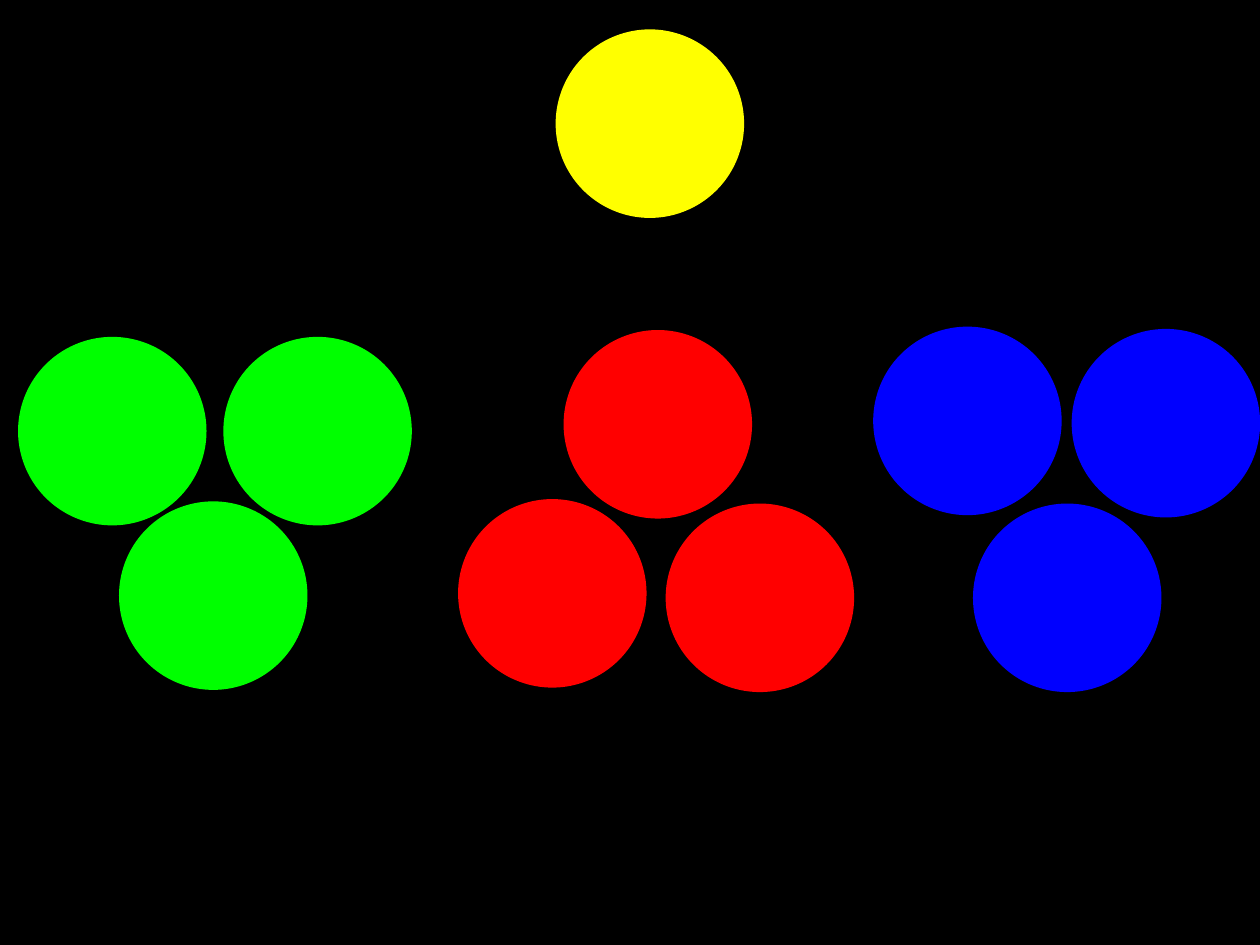
"""Draw coloured discs in three clusters with a yellow disc above, on black."""
from pptx import Presentation, util as u
from pptx.dml import color
from pptx.enum import shapes

hues = {"black": "000000", "green": "00FF00", "red": "FF0000",
        "blue": "0000FF", "yellow": "FFFF00"}
discs = [
    ("green", [(0.18, 2.99), (1.99, 2.99), (1.07, 4.44)]),
    ("red", [(4.99, 2.93), (5.89, 4.46)]),
    ("blue", [(8.6, 4.46), (9.47, 2.92), (7.72, 2.9)]),
    ("red", [(4.06, 4.42)]),
    ("yellow", [(4.92, 0.28)]),
]
size = u.Inches(1.62)

deck = Presentation()
deck.slide_width = u.Inches(11.11)
deck.slide_height = u.Inches(8.33)
slide = deck.slides.add_slide(deck.slide_layouts[6])
back = slide.background.fill
back.solid()
back.fore_color.rgb = color.RGBColor.from_string(hues["black"])

for hue, spots in discs:
    tint = color.RGBColor.from_string(hues[hue])
    for left, top in spots:
        disc = slide.shapes.add_shape(
            shapes.MSO_SHAPE.OVAL, u.Inches(left), u.Inches(top), size, size)
        disc.shadow.inherit = False
        disc.fill.solid()
        disc.fill.fore_color.rgb = tint
        disc.line.color.rgb = tint
        disc.line.width = u.Pt(3)

deck.save("out.pptx")
